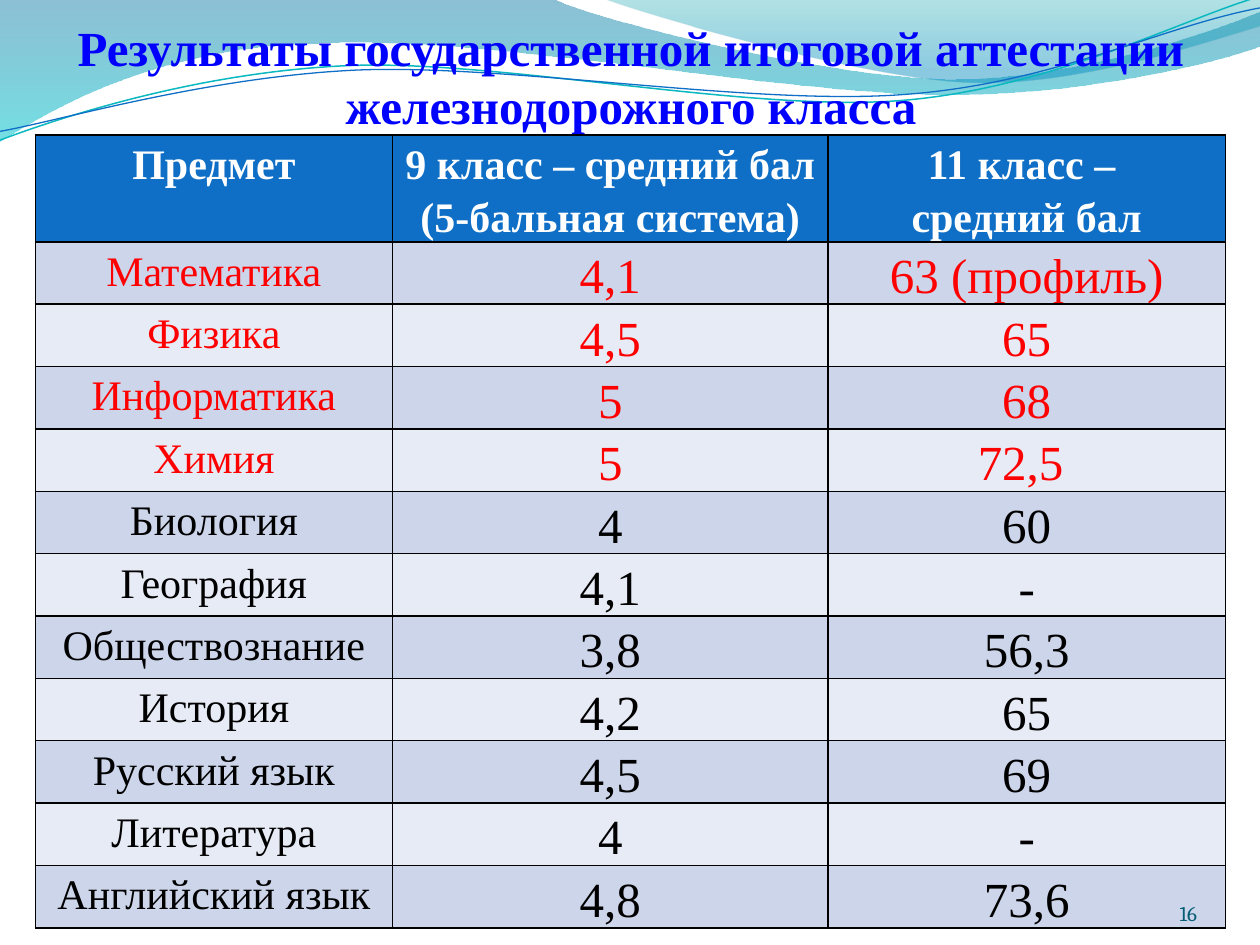
from dataclasses import dataclass

from lxml.etree import SubElement as Sub
from pptx import Presentation
from pptx.dml.color import RGBColor as Rgb
from pptx.enum.text import MSO_ANCHOR as Anchor, MSO_AUTO_SIZE as Fit, PP_ALIGN as Align
from pptx.oxml.ns import qn
from pptx.util import Pt


@dataclass(frozen=True)
class Theme:
    serif: str = "Times New Roman"
    small: str = "Cambria"
    big: int = 28
    mid: int = 24
    tiny: int = 12
    title: str = "0000FF"
    head: str = "0F6FC6"
    white: str = "FFFFFF"
    black: str = "000000"
    red: str = "FF0000"
    bands: tuple = ("CCD5EA", "E7EBF5")
    page: str = "045D75"
    teal: str = "0AB8BF"


THEME = Theme()

# An outline is a start point, then lines (2 numbers) and curves (6 numbers).
# A gradient stop is position, colour, opacity in percent.
WAVES = [
    ([(0, 0), (317, -0.5), (343, 12, 478, 45, 546, 45),
      (614, 45, 690, 19, 720, 6.5), (721, 26), (708, 32, 626, 55, 537, 54),
      (448, 54, 275, 20, 185, 24.5), (93, 26, 33, 60, -0.5, 81), (0, 0)],
     [(0, "0074A1", 45), (1, "00C6CF", 55)]),
    ([(345, -0.5), (366.5, 8, 491, 44.5, 553.5, 47),
      (616, 49.5, 692, 23, 720, 15), (720, 0), (345, -0.5)],
     [(0, "00A1A9", 30), (0.8, "008BBF", 45)]),
]
TILT = 357.3
STRANDS = [
    ([(-1.4, 63.1), (33.7, 51.7, 114.3, 29.4, 199.9, 30),
      (284.9, 30.5, 425.8, 67.2, 512.5, 64.8),
      (599.3, 62.3, 676.5, 25.9, 720.1, 15.4)], THEME.teal, 0.85),
    ([(-1.1, 58.1), (33.2, 53.7, 118.2, 32.6, 204.3, 32.7),
      (290.4, 33.2, 429.1, 63.8, 515.3, 61.4),
      (601.5, 59.4, 664.5, 29.3, 721.4, 21.5)], THEME.head, 0.75),
]

TITLE = "Результаты государственной итоговой аттестации\vжелезнодорожного класса"
HEADS = ["Предмет", "9 класс – средний бал\n(5-бальная система)",
         "11 класс – \nсредний бал"]
MARKS = [
    ("Математика", "4,1", "63 (профиль)"),
    ("Физика", "4,5", "65"),
    ("Информатика", "5", "68"),
    ("Химия", "5", "72,5 "),
    ("Биология", "4", "60"),
    ("География", "4,1", "-"),
    ("Обществознание", "3,8", "56,3"),
    ("История", "4,2", "65"),
    ("Русский язык", "4,5", "69"),
    ("Литература", "4", "-"),
    ("Английский язык", "4,8", "73,6"),
]
CORE = 4  # leading subjects shown in red
WIDTHS = (204, 249, 227)
HEAD_TALL, ROW_TALL, FRAME_TALL = 57, 35.3, 485


def apply(item, **values):
    for name, value in values.items():
        setattr(item, name, value)


def write(frame, text, size, color, font=THEME.serif, bold=False,
          align=Align.CENTER, space=None):
    frame.text = text
    for para in frame.paragraphs:
        apply(para, alignment=align, line_spacing=space)
        for run in para.runs:
            apply(run.font, name=font, size=Pt(size), bold=bold)
            run.font.color.rgb = Rgb.from_string(color)


def add_path(shapes, outline, close):
    """Draw the outline through its control points, then bend its curves."""
    first, *parts = outline
    spots = [(Pt(part[i]), Pt(part[i + 1]))
             for part in parts for i in range(0, len(part), 2)]
    pen = shapes.build_freeform(Pt(first[0]), Pt(first[1]))
    pen.add_line_segments(spots, close=close)
    shape = pen.convert_to_shape()
    shape.shadow.inherit = False
    lines = iter(list(shape._element.iter(qn("a:lnTo"))))
    for part in parts:
        bend = next(lines)
        if len(part) == 6:
            bend.tag = qn("a:cubicBezTo")
            for _ in range(2):
                line = next(lines)
                bend.append(line[0])
                line.getparent().remove(line)
    return shape


def add_wave(shapes, outline, stops):
    shape = add_path(shapes, outline, True)
    shape.line.fill.background()
    shape.fill.gradient()
    shape.fill.gradient_angle = 270
    for stop, (place, color, _) in zip(shape.fill.gradient_stops, stops):
        stop.position = place
        stop.color.rgb = Rgb.from_string(color)
    for tone, stop in zip(shape._element.spPr.iter(qn("a:srgbClr")), stops):
        Sub(tone, qn("a:alpha"), val=str(stop[2] * 1000))
    return shape


def add_strand(shapes, outline, color, width):
    shape = add_path(shapes, outline, False)
    shape.rotation = TILT
    shape.fill.background()
    shape.line.width = Pt(width)
    shape.line.color.rgb = Rgb.from_string(color)


def add_decor(slide):
    """Draw the waves and strands, and hand them to the slide's layout."""
    parts = [add_wave(slide.shapes, *wave) for wave in WAVES]
    group = slide.shapes.add_group_shape()
    for strand in STRANDS:
        add_strand(group.shapes, *strand)
    for part in parts + [group]:
        slide.slide_layout.shapes._spTree.append(part._element)


def set_title(slide):
    title = slide.shapes.title
    apply(title, left=Pt(36.5), top=Pt(26), width=Pt(648), height=Pt(51))
    frame = title.text_frame
    apply(frame, margin_left=0, margin_top=Pt(3.6), margin_right=0,
          margin_bottom=0, vertical_anchor=Anchor.BOTTOM, word_wrap=True,
          auto_size=Fit.NONE)
    write(frame, TITLE, THEME.big, THEME.title, bold=True)


def edge(cell):
    props = cell._tc.get_or_add_tcPr()
    for side in ("lnL", "lnR", "lnT", "lnB"):
        line = Sub(props, qn("a:" + side), w=str(Pt(1)))
        Sub(Sub(line, qn("a:solidFill")), qn("a:srgbClr"), val=THEME.black)


def fill_cell(cell, text, back, **style):
    edge(cell)
    apply(cell, margin_left=Pt(5), margin_right=Pt(5), margin_top=0,
          margin_bottom=0)
    cell.fill.solid()
    cell.fill.fore_color.rgb = Rgb.from_string(back)
    write(cell.text_frame, text, space=1.15, **style)


def add_marks(slide):
    frame = slide.shapes.add_table(len(MARKS) + 1, len(WIDTHS), Pt(20.2), Pt(77.2),
                                   Pt(sum(WIDTHS)), Pt(FRAME_TALL))
    table = frame.table
    for col, width in zip(table.columns, WIDTHS):
        col.width = Pt(width)
    for row in table.rows:
        row.height = Pt(ROW_TALL)
    table.rows[0].height = Pt(HEAD_TALL)
    frame.height = Pt(FRAME_TALL)
    for col, text in enumerate(HEADS):
        fill_cell(table.cell(0, col), text, THEME.head, size=THEME.mid,
                  color=THEME.white, bold=True)
    for row, marks in enumerate(MARKS):
        for col, text in enumerate(marks):
            fill_cell(table.cell(row + 1, col), text, THEME.bands[row % 2],
                      size=THEME.big if col else THEME.mid,
                      color=THEME.red if row < CORE else THEME.black)


def add_page(slide, text):
    frame = slide.shapes.add_textbox(Pt(624), Pt(500.5), Pt(60), Pt(28.5)).text_frame
    apply(frame, margin_left=0, margin_top=0, margin_right=0, margin_bottom=0,
          vertical_anchor=Anchor.BOTTOM, word_wrap=True)
    write(frame, text, THEME.tiny, THEME.page, THEME.small, align=Align.RIGHT)


def main():
    deck = Presentation()
    apply(deck, slide_width=Pt(720), slide_height=Pt(540))
    slide = deck.slides.add_slide(deck.slide_layouts[5])
    add_decor(slide)
    set_title(slide)
    add_marks(slide)
    add_page(slide, "16")
    deck.save("out.pptx")


if __name__ == "__main__":
    main()
